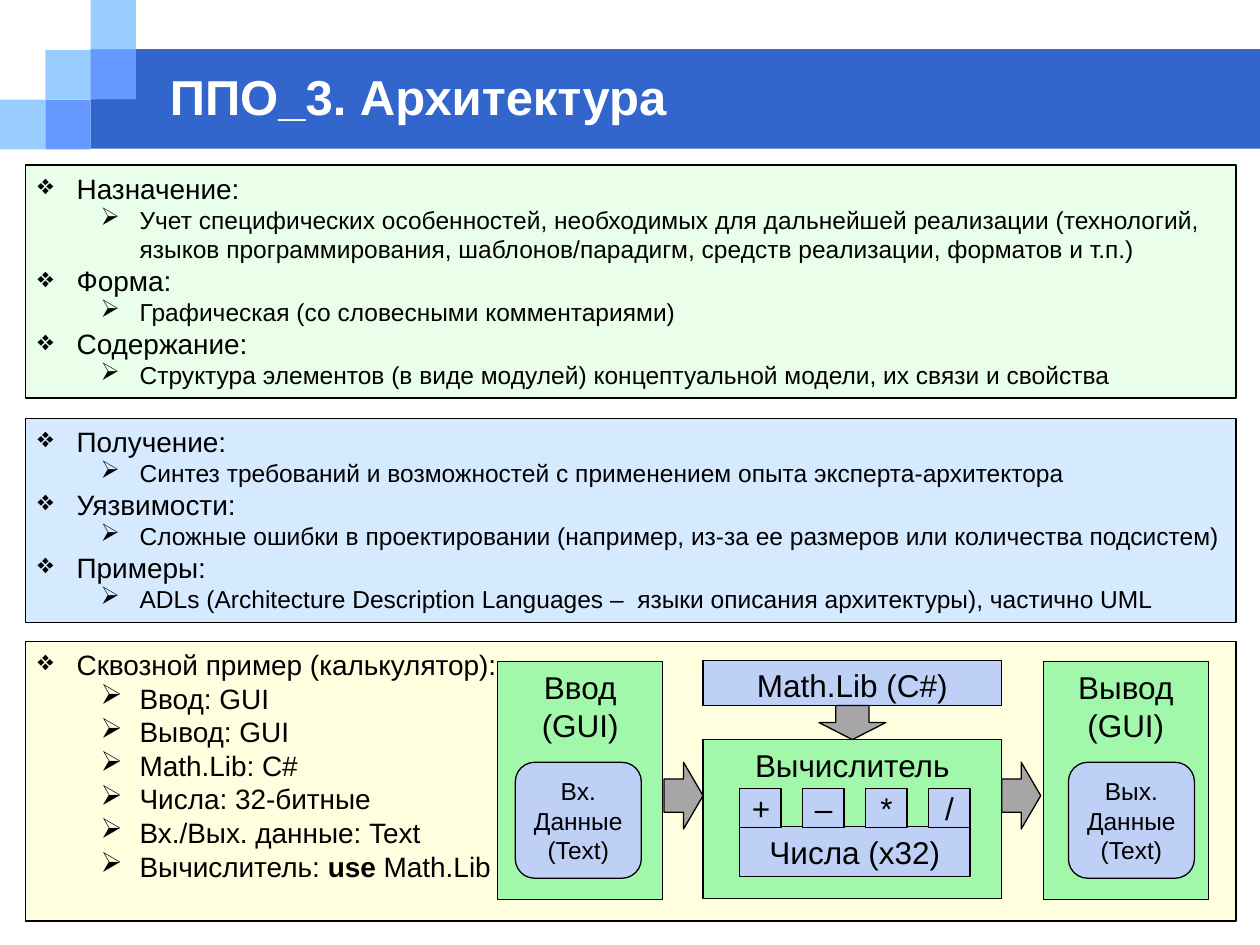
from dataclasses import dataclass

from lxml import etree
from pptx import Presentation
from pptx import util as u
from pptx.dml.color import RGBColor
from pptx.enum import shapes, text
from pptx.oxml.ns import qn

COLUMNS, ROWS = 100, 75
SHAPE = shapes.MSO_SHAPE
ANCHOR = text.MSO_ANCHOR
ALIGN = text.PP_ALIGN


@dataclass(frozen=True)
class Theme:
    font: str = "Arial"
    ink: str = "000000"
    paper: str = "FFFFFF"
    band: str = "3366CC"
    tile: str = "99CCFF"
    tile_deep: str = "6699FF"
    goals: str = "99FF99"
    practice: str = "3399FF"
    example: str = "FFFF66"
    component: str = "A2F8AA"
    block: str = "BED0F5"
    arrow: str = "A6A6A6"
    panel_opacity: int = 20
    title: int = 28
    label: int = 18
    topic: int = 16
    detail: int = 14
    outline: float = 0.75


THEME = Theme()

GOALS = [
    (0, "Назначение:"),
    (1, "Учет специфических особенностей, необходимых для дальнейшей реализации "
        "(технологий, языков программирования, шаблонов/парадигм, средств "
        "реализации, форматов и т.п.)"),
    (0, "Форма:"),
    (1, "Графическая (со словесными комментариями)"),
    (0, "Содержание:"),
    (1, "Структура элементов (в виде модулей) концептуальной модели, их связи и свойства"),
]
PRACTICE = [
    (0, "Получение:"),
    (1, "Синтез требований и возможностей с применением опыта эксперта-архитектора"),
    (0, "Уязвимости:"),
    (1, "Сложные ошибки в проектировании (например, из-за ее размеров или количества подсистем)"),
    (0, "Примеры:"),
    (1, "ADLs (Architecture Description Languages –  языки описания архитектуры), частично UML"),
]
EXAMPLE = [
    (0, "Сквозной пример (калькулятор):"),
    (1, "Ввод: GUI"),
    (1, "Вывод: GUI"),
    (1, "Math.Lib: C#"),
    (1, "Числа: 32-битные"),
    (1, "Вх./Вых. данные: Text"),
    (1, "Вычислитель: *use *Math.Lib"),
]


def apply(target, **values):
    for name, value in values.items():
        setattr(target, name, value)


def grid(column, row, width, height):
    cell_width, cell_height = u.Inches(10) / COLUMNS, u.Inches(7.5) / ROWS
    return [round(value) for value in (column * cell_width, row * cell_height,
                                       width * cell_width, height * cell_height)]


def add_run(paragraph, words, size, color=THEME.ink, bold=False):
    run = paragraph.add_run()
    run.text = words
    apply(run.font, name=THEME.font, size=u.Pt(size), bold=bold)
    run.font.color.rgb = RGBColor.from_string(color)


def add_paragraphs(frame, count):
    return [frame.paragraphs[0]] + [frame.add_paragraph() for _ in range(count - 1)]


def add_box(slide, place, fill, kind=SHAPE.RECTANGLE, outlined=True):
    shape = slide.shapes.add_shape(kind, *grid(*place))
    shape.shadow.inherit = False
    shape.fill.solid()
    shape.fill.fore_color.rgb = RGBColor.from_string(fill)
    if outlined:
        shape.line.width = u.Pt(THEME.outline)
        shape.line.color.rgb = RGBColor.from_string(THEME.ink)
    else:
        shape.line.fill.background()
    return shape


def add_labelled(slide, place, lines, fill, size=THEME.label,
                 anchor=ANCHOR.MIDDLE, kind=SHAPE.RECTANGLE):
    shape = add_box(slide, place, fill, kind)
    frame = shape.text_frame
    apply(frame, word_wrap=True, vertical_anchor=anchor)
    for paragraph, line in zip(add_paragraphs(frame, len(lines)), lines):
        paragraph.alignment = ALIGN.CENTER
        add_run(paragraph, line, size)


def add_bullet(paragraph, level):
    properties = paragraph._p.get_or_add_pPr()
    properties.set("marL", str(u.Inches((0.31, 0.81)[level])))
    properties.set("indent", str(u.Inches(-0.31)))
    etree.SubElement(properties, qn("a:buChar")).set("char", "❖➢"[level])


def add_panel(slide, row, height, fill, items, detail_size=THEME.detail):
    shape = add_box(slide, (2, row, 96.1, height), fill)
    color = shape._element.spPr.find(qn("a:solidFill")).find(qn("a:srgbClr"))
    etree.SubElement(color, qn("a:alpha")).set("val", str(THEME.panel_opacity * 1000))
    frame = shape.text_frame
    apply(frame, word_wrap=True, vertical_anchor=ANCHOR.TOP)
    for paragraph, (level, words) in zip(add_paragraphs(frame, len(items)), items):
        apply(paragraph, level=level, alignment=ALIGN.LEFT if level else ALIGN.JUSTIFY)
        add_bullet(paragraph, level)
        for index, piece in enumerate(words.split("*")):
            add_run(paragraph, piece, detail_size if level else THEME.topic,
                    bold=index % 2 == 1)


def add_header(slide):
    add_box(slide, (7.2, 3.9, 92.8, 7.9), THEME.band, outlined=False)
    tiles = [(0, 2, THEME.tile), (1, 1, THEME.tile), (2, 0, THEME.tile),
             (2, 1, THEME.tile_deep), (1, 2, THEME.tile_deep)]
    for column, row, fill in tiles:
        add_box(slide, (column * 3.6, row * 3.95, 3.6, 3.95), fill, outlined=False)
    title = slide.shapes.add_textbox(*grid(12.5, 5, 80.8, 5.3))
    apply(title.text_frame, word_wrap=True, vertical_anchor=ANCHOR.MIDDLE)
    add_run(title.text_frame.paragraphs[0], "ППО_3. Архитектура",
            THEME.title, THEME.paper, bold=True)


def add_calculator(slide):
    add_labelled(slide, (55.8, 58.7, 23.7, 12.6), ["Вычислитель"], THEME.component,
                 anchor=ANCHOR.TOP)
    add_labelled(slide, (58.7, 65.6, 18.3, 4), ["Числа (x32)"], THEME.block)
    for index, operation in enumerate("+–*/"):
        add_labelled(slide, (58.7 + index * 5, 62.6, 3.3, 3.1), [operation], THEME.block)
    add_labelled(slide, (55.8, 52.4, 23.7, 3.6), ["Math.Lib (C#)"], THEME.block,
                 anchor=ANCHOR.TOP)


def add_terminal(slide, column, name, data_column, data):
    add_labelled(slide, (column, 52.5, 13.1, 18.9), [name, "(GUI)"], THEME.component,
                 anchor=ANCHOR.TOP)
    add_labelled(slide, (data_column, 60.5, 10, 9.2), [data, "(Text)"], THEME.block,
                 THEME.detail, kind=SHAPE.FLOWCHART_ALTERNATE_PROCESS)


def add_flow(slide):
    for column in (52.7, 79.5):
        add_box(slide, (column, 60.5, 3.1, 5.3), THEME.arrow, SHAPE.RIGHT_ARROW)
    downward = add_box(slide, (66.3, 54.7, 2.7, 5.3), THEME.arrow, SHAPE.RIGHT_ARROW)
    downward.rotation = 90


def main():
    presentation = Presentation()
    apply(presentation, slide_width=u.Inches(10), slide_height=u.Inches(7.5))
    slide = presentation.slides.add_slide(presentation.slide_layouts[6])
    add_header(slide)
    add_panel(slide, 13.1, 18.5, THEME.goals, GOALS)
    add_panel(slide, 33.2, 16.2, THEME.practice, PRACTICE)
    add_panel(slide, 50.9, 22.2, THEME.example, EXAMPLE, THEME.topic)
    add_calculator(slide)
    add_terminal(slide, 39.5, "Ввод", 40.9, "Вх. Данные")
    add_terminal(slide, 82.8, "Вывод", 84.8, "Вых. Данные")
    add_flow(slide)
    presentation.save("out.pptx")


if __name__ == "__main__":
    main()
